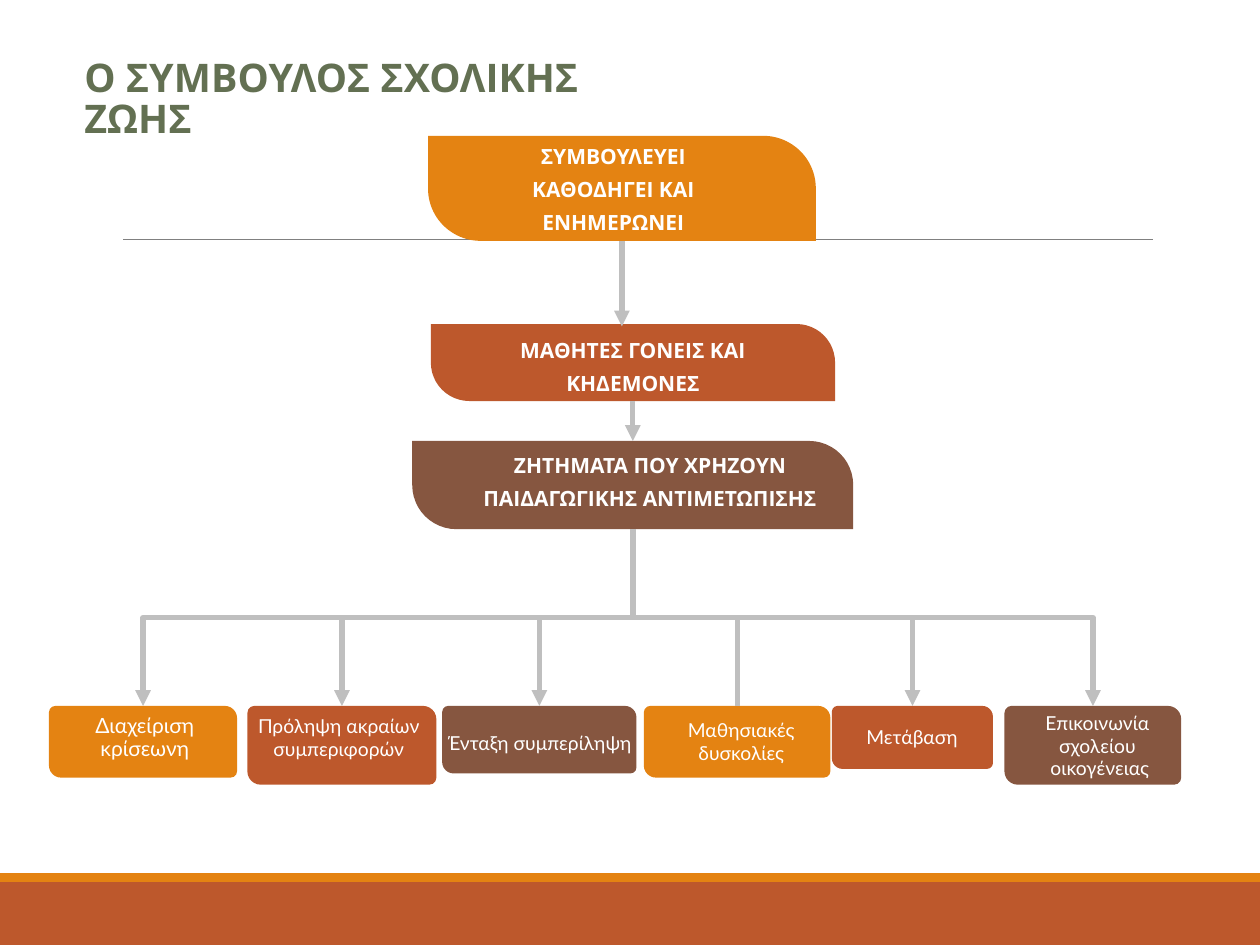
import pptx
import pptx.dml.color
import pptx.enum.shapes
import pptx.enum.text
import pptx.oxml
import pptx.oxml.ns
import pptx.util

Pt = pptx.util.Pt
SHAPES = pptx.enum.shapes.MSO_SHAPE
CONNECTORS = pptx.enum.shapes.MSO_CONNECTOR
ANCHORS = pptx.enum.text.MSO_ANCHOR
ALIGN = pptx.enum.text.PP_ALIGN

ORANGE, RUST, BROWN = "E48312", "BD582C", "865640"
WHITE, GREEN, RULE_GREY, ARROW_GREY = "FFFFFF", "637052", "808080", "BFBFBF"

HEADING = {"name": "Open Sans", "size": Pt(12), "bold": True}
LEAF = {"name": "Lato", "size": Pt(11), "bold": False}


def color(hex_value):
    return pptx.dml.color.RGBColor.from_string(hex_value)


def apply(target, values):
    for name, value in values.items():
        setattr(target, name, value)


class FlowSlide:
    """Holds the current slide and draws its elements in points."""

    def __init__(self, slide):
        self.slide = slide
        self.shapes = slide.shapes

    def title(self, text, x, y, w, h, font, fill):
        title = self.shapes.title
        apply(title, {"left": Pt(x), "top": Pt(y), "width": Pt(w), "height": Pt(h)})
        self.fill_text(title.text_frame, [text], font, fill, ALIGN.LEFT, 0.88, ANCHORS.TOP)

    def fill_text(self, frame, lines, font, fill, align, spacing, anchor, wrap=True):
        apply(frame, {
            "word_wrap": wrap, "vertical_anchor": anchor,
            "auto_size": pptx.enum.text.MSO_AUTO_SIZE.NONE,
            "margin_left": Pt(7.2), "margin_right": Pt(7.2),
            "margin_top": Pt(3.6), "margin_bottom": Pt(3.6),
        })
        for index, line in enumerate(lines):
            paragraph = frame.add_paragraph() if index else frame.paragraphs[0]
            apply(paragraph, {"alignment": align, "line_spacing": spacing})
            run = paragraph.add_run()
            run.text = line
            apply(run.font, font)
            run.font.color.rgb = color(fill)

    def block(self, preset, x, y, w, h, fill, corners=()):
        block = self.shapes.add_shape(preset, Pt(x), Pt(y), Pt(w), Pt(h))
        block.shadow.inherit = False
        block.fill.solid()
        block.fill.fore_color.rgb = color(fill)
        block.line.fill.background()
        for index, corner in enumerate(corners):
            block.adjustments[index] = corner

    def label(self, lines, x, y, w, h, font, spacing, wrap=True):
        label = self.shapes.add_textbox(Pt(x), Pt(y), Pt(w), Pt(h))
        self.fill_text(label.text_frame, lines, font, WHITE, ALIGN.CENTER,
                       Pt(spacing), ANCHORS.MIDDLE, wrap)

    def line(self, x1, y1, x2, y2, stroke, width, arrow=False, kind=CONNECTORS.STRAIGHT):
        line = self.shapes.add_connector(kind, Pt(x1), Pt(y1), Pt(x2), Pt(y2))
        line.line.color.rgb = color(stroke)
        line.line.width = Pt(width)
        properties = line._element.spPr
        namespace = pptx.oxml.ns.nsdecls("a")
        if arrow:
            outline = properties.find(pptx.oxml.ns.qn("a:ln"))
            outline.append(pptx.oxml.parse_xml(f'<a:tailEnd {namespace} type="triangle"/>'))
        properties.append(pptx.oxml.parse_xml(f"<a:effectLst {namespace}/>"))
        return line

    def branch(self, x1, y1, x2, y2, arrow):
        """Elbow that runs down, across and down again."""
        run, drop = abs(x2 - x1), y2 - y1
        elbow = self.line(x1, y1, x2, y2, ARROW_GREY, 3, arrow, CONNECTORS.ELBOW)
        # The preset runs sideways, so it is turned about its centre
        apply(elbow, {"left": Pt((x1 + x2 - drop) / 2), "top": Pt((y1 + y2 - run) / 2),
                      "width": Pt(drop), "height": Pt(run)})
        frame = elbow._element.spPr.find(pptx.oxml.ns.qn("a:xfrm"))
        rightward = x2 > x1
        frame.set("rot", "16200000" if rightward else "5400000")
        frame.set("flipH", "1" if rightward else "0")


def main():
    deck = pptx.Presentation()
    apply(deck, {"slide_width": Pt(720), "slide_height": Pt(540)})
    flow = FlowSlide(deck.slides.add_slide(deck.slide_layouts[5]))

    # Footer bands and rule
    flow.block(SHAPES.RECTANGLE, 0, 504, 720, 36, RUST)
    flow.block(SHAPES.RECTANGLE, 0, 499, 720, 5, ORANGE)
    flow.line(70.5, 136.8, 658.8, 136.8, RULE_GREY, 0.5)

    flow.title("Ο ΣΥΜΒΟΥΛΟΣ ΣΧΟΛΙΚΗΣ ΖΩΗΣ", 41, 30, 352, 62,
               {"name": "Open Sans", "size": Pt(22.5), "bold": True}, GREEN)

    # Main steps: block box, fill, text, label box
    steps = [
        ((244.6, 77.6, 221.6, 60), ORANGE, ["ΣΥΜΒΟΥΛΕΥΕΙ", "ΚΑΘΟΔΗΓΕΙ ΚΑΙ ΕΝΗΜΕΡΩΝΕΙ"],
         (260.5, 74, 180, 64)),
        ((246.2, 185.2, 231, 44), RUST, ["ΜΑΘΗΤΕΣ ΓΟΝΕΙΣ ΚΑΙ ΚΗΔΕΜΟΝΕΣ"],
         (256.7, 185, 210, 45)),
        ((235.6, 252, 252, 50.4), BROWN, ["ΖΗΤΗΜΑΤΑ ΠΟΥ ΧΡΗΖΟΥΝ ΠΑΙΔΑΓΩΓΙΚΗΣ ΑΝΤΙΜΕΤΩΠΙΣΗΣ"],
         (254, 250.6, 235, 45)),
    ]
    for box, fill, lines, label_box in steps:
        flow.block(SHAPES.ROUND_2_DIAG_RECTANGLE, *box, fill, (0, 0.5))
        flow.label(lines, *label_box, HEADING, 18.8)

    # Topics: left, width, height, fill, text, label box, font changes, wrap
    leaf_top = 403.4
    topics = [
        (28, 107.5, 41, ORANGE, ["Διαχείριση κρίσεωνη"],
         (41, 404.6, 83.5, 34), {"size": Pt(12)}, True),
        (141.4, 108, 45, RUST, ["Πρόληψη ακραίων συμπεριφορών"],
         (137.5, 404.6, 112.3, 34), {}, True),
        (252.7, 111, 38.6, BROWN, ["Ένταξη συμπερίληψη"],
         (248.4, 414.7, 120.2, 20), {}, False),
        (367.9, 106.6, 41, ORANGE, ["Μαθησιακές δυσκολίες"],
         (368.6, 406.8, 110, 34), {}, True),
        (475.4, 92, 36, RUST, ["Μετάβαση"],
         (487.4, 411, 67.7, 20), {}, False),
        (574, 101, 45, BROWN, ["Επικοινωνία σχολείου", " οικογένειας"],
         (575.3, 402.5, 103.7, 47), {}, True),
    ]
    for x, w, h, fill, lines, label_box, changes, wrap in topics:
        flow.block(SHAPES.ROUND_2_DIAG_RECTANGLE, x, leaf_top, w, h, fill, (0.09, 0.17))
        flow.label(lines, *label_box, {**LEAF, **changes}, 13.1, wrap)

    # Arrows down the steps, then out to each topic
    trunk = 361.6
    flow.line(355.4, 137.6, 355.4, 186.5, ARROW_GREY, 3, arrow=True)
    flow.line(trunk, 229.2, trunk, 252, ARROW_GREY, 3, arrow=True)
    for index, (x, w, *_) in enumerate(topics):
        flow.branch(trunk, 302.4, x + w / 2, leaf_top, arrow=index != 3)

    deck.save("out.pptx")


if __name__ == "__main__":
    main()
